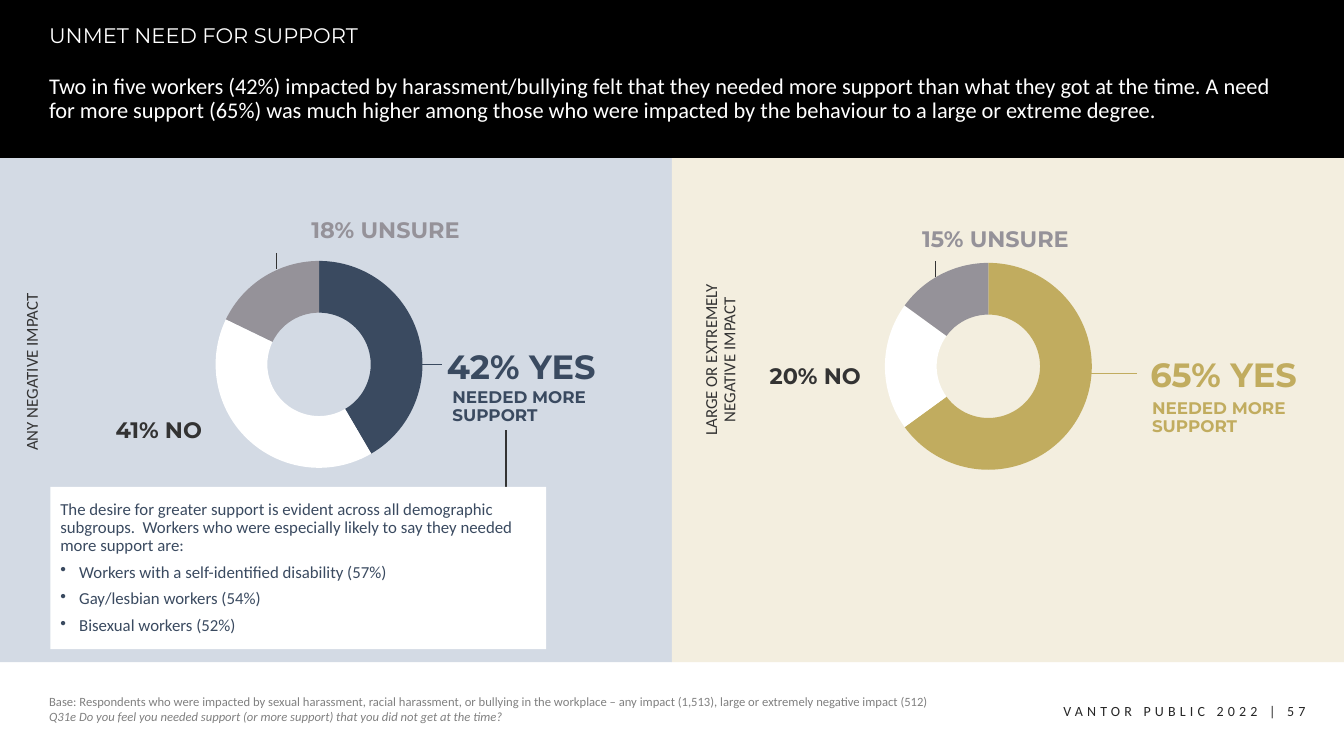
"""Builds the slide on unmet need for support as a pair of doughnut panels."""
from lxml.etree import SubElement
from pptx import Presentation
from pptx.chart.data import CategoryChartData
from pptx.dml.color import RGBColor
from pptx.enum.chart import XL_CHART_TYPE
from pptx.enum.shapes import MSO_CONNECTOR, MSO_SHAPE
from pptx.enum.text import MSO_ANCHOR, PP_ALIGN
from pptx.oxml import parse_xml
from pptx.oxml.ns import nsdecls, qn
from pptx.util import Pt

THEME = {
    "black": "000000", "white": "FFFFFF", "ink": "333333", "dark": "262626",
    "navy": "3A4A60", "gold": "C1AC5F", "grey": "959299", "note": "808080",
    "mist": "D3DAE4", "cream": "F3EEDF",
    "body_font": "Calibri", "head_font": "Montserrat",
    "yes": 24, "lead": 16, "label": 16, "title": 15, "text": 12, "tag": 10, "base": 9,
}
TITLE = "UNMET NEED FOR SUPPORT"
LEAD = ("Two in five workers (42%) impacted by harassment/bullying felt that they needed more support "
        "than what they got at the time. A need for more support (65%) was much higher among those "
        "who were impacted by the behaviour to a large or extreme degree.")
BASE = ("Base: Respondents who were impacted by sexual harassment, racial harassment, or bullying in the "
        "workplace – any impact (1,513), large or extremely negative impact (512)")
QUESTION = "Q31e Do you feel you needed support (or more support) that you did not get at the time?"
TAG = "VANTOR PUBLIC 2022 | 57"
NEEDED = "NEEDED MORE SUPPORT"
GROUPS_INTRO = ("The desire for greater support is evident across all demographic subgroups.  Workers who "
                "were especially likely to say they needed more support are:")
GROUPS = ["Workers with a self-identified disability (57%)", "Gay/lesbian workers (54%)",
          "Bisexual workers (52%)"]
PANELS = [
    {"name": "ANY NEGATIVE IMPACT", "name_at": (-48.2, 229.7), "name_align": PP_ALIGN.LEFT,
     "fill": "mist", "accent": "navy", "values": (42, 41, 18), "chart_at": (118.8, 176.4),
     "yes_box": (307.4, 247.7, 136.8, 31), "needed_at": (316.1, 275),
     "no_box": (4.3, 292.3, 218.2, 31), "no_align": PP_ALIGN.CENTER, "unsure_at": (166.3, 149.8),
     "yes_line": (301, 260.6, 315.4, 260.6), "unsure_line": (197.3, 180.7, 197.3, 192.2)},
    {"name": "LARGE OR EXTREMELY NEGATIVE IMPACT", "name_at": (443.5, 229),
     "name_align": PP_ALIGN.CENTER,
     "fill": "cream", "accent": "gold", "values": (65, 20, 15), "chart_at": (596.9, 177.8),
     "yes_box": (805.7, 253.4, 143.3, 31), "needed_at": (815.8, 283),
     "no_box": (517, 254.2, 105, 31), "no_align": PP_ALIGN.RIGHT, "unsure_at": (602, 156.2),
     "yes_line": (776.2, 266.4, 812.2, 266.4), "unsure_line": (668.2, 186.5, 668.2, 198)},
]
SLIDE_W, SLIDE_H, HEADER_H, PANEL_H = 960, 540, 113, 360
CHART_W, CHART_H, RING = 218.2, 167.8, 147.8


def color(key):
    return RGBColor.from_string(THEME[key])


def add_rect(s, box, fill):
    sp = s.shapes.add_shape(MSO_SHAPE.RECTANGLE, *map(Pt, box))
    sp.shadow.inherit = False
    sp.fill.solid()
    sp.fill.fore_color.rgb = color(fill)
    sp.line.fill.background()
    return sp


def add_line(s, ends, key, width):
    ln = s.shapes.add_connector(MSO_CONNECTOR.STRAIGHT, *map(Pt, ends))
    ln.line.color.rgb = color(key)
    ln.line.width = Pt(width)
    SubElement(ln._element.spPr, qn("a:effectLst"))


def write(p, text, size, key, font="body_font", bold=False, italic=False,
          align=PP_ALIGN.LEFT, spacing=0.9, before=10):
    p.alignment, p.line_spacing, p.space_before = align, spacing, Pt(before)
    r = p.add_run()
    r.text = text
    r.font.size, r.font.name = Pt(THEME[size]), THEME[font]
    r.font.bold, r.font.italic = bold, italic
    r.font.color.rgb = color(key)
    return r


def add_text(s, box, text, size, key, anchor=MSO_ANCHOR.MIDDLE, rotation=0, **style):
    sp = s.shapes.add_textbox(*map(Pt, box))
    sp.rotation = rotation
    tf = sp.text_frame
    tf.word_wrap, tf.vertical_anchor = True, anchor
    return tf, write(tf.paragraphs[0], text, size, key, **style)


def add_ring(s, panel):
    data = CategoryChartData()
    data.categories = ["1", "2", "3"]
    data.add_series("Series 1", panel["values"])
    box = map(Pt, (*panel["chart_at"], CHART_W, CHART_H))
    chart = s.shapes.add_chart(XL_CHART_TYPE.DOUGHNUT, *box, data).chart
    chart.has_legend = chart.has_title = False
    chart.font.size, chart.font.name = Pt(THEME["tag"]), THEME["body_font"]
    chart.font.color.rgb = color("ink")
    for i, key in enumerate((panel["accent"], "white", "grey")):
        fmt = chart.plots[0].series[0].points[i].format
        fmt.fill.solid()
        fmt.fill.fore_color.rgb = color(key)
        fmt.line.fill.background()
    area = chart._chartSpace.find(".//" + qn("c:plotArea"))
    area.find(".//" + qn("c:holeSize")).set("val", "75")
    for old in area.findall(qn("c:layout")):
        area.remove(old)
    w, h = RING / CHART_W, RING / CHART_H
    parts = {"layoutTarget": "inner", "xMode": "edge", "yMode": "edge",
             "x": (1 - w) / 2, "y": (1 - h) / 2, "w": w, "h": h}
    layout = parse_xml(f"<c:layout {nsdecls('c')}><c:manualLayout/></c:layout>")
    for tag, val in parts.items():
        SubElement(layout[0], qn("c:" + tag)).set("val", str(val))
    area.insert(0, layout)


def add_panel(s, panel):
    accent = panel["accent"]
    label = {"font": "head_font", "bold": True}
    yes, no, unsure = panel["values"]
    add_ring(s, panel)
    add_text(s, (*panel["name_at"], 142.6, 56.2), panel["name"], "text", "ink",
             rotation=270, align=panel["name_align"])
    add_text(s, panel["yes_box"], f"{yes}% YES ", "yes", accent, align=PP_ALIGN.CENTER, **label)
    add_text(s, (*panel["needed_at"], 144, 31), NEEDED, "text", accent, **label)
    add_text(s, panel["no_box"], f"{no}% NO", "label", "ink", align=panel["no_align"], **label)
    add_text(s, (*panel["unsure_at"], CHART_W, 31), f"{unsure}% UNSURE", "label", "grey",
             align=PP_ALIGN.CENTER, **label)
    add_line(s, panel["yes_line"], accent, 0.5)
    add_line(s, panel["unsure_line"], "ink", 0.5)


def add_groups(s):
    add_line(s, (361.5, 370, 361.5, 307.5), "ink", 1.5)
    tf = add_rect(s, (36, 347.8, 354.2, 115.9), "white").text_frame
    tf.word_wrap, tf.vertical_anchor = True, MSO_ANCHOR.MIDDLE
    write(tf.paragraphs[0], GROUPS_INTRO, "text", "navy", before=6)
    for group in GROUPS:
        p = tf.add_paragraph()
        write(p, group, "text", "navy", before=6)
        pPr = p._p.get_or_add_pPr()
        pPr.set("marL", str(Pt(13.5)))
        pPr.set("indent", str(-Pt(13.5)))
        SubElement(pPr, qn("a:buChar")).set("char", "•")


def main():
    prs = Presentation()
    prs.slide_width, prs.slide_height = Pt(SLIDE_W), Pt(SLIDE_H)
    s = prs.slides.add_slide(prs.slide_layouts[6])
    add_rect(s, (0, 0, SLIDE_W, HEADER_H), "black")
    add_text(s, (28, 14.4, 745, 29), TITLE, "title", "white", anchor=MSO_ANCHOR.TOP,
             font="head_font", before=0)
    add_text(s, (28, 43, 890.6, 56), LEAD, "lead", "white")
    panel_w = SLIDE_W / len(PANELS)
    for i, panel in enumerate(PANELS):
        add_rect(s, (i * panel_w, HEADER_H, panel_w, PANEL_H), panel["fill"])
    for panel in PANELS:
        add_panel(s, panel)
    add_groups(s)
    plain = {"spacing": 1.0, "before": 0}
    tf, _ = add_text(s, (28, 491.8, 719.3, 28.8), BASE, "base", "note", **plain)
    write(tf.add_paragraph(), QUESTION, "base", "note", italic=True, **plain)
    _, r = add_text(s, (725.8, 498.2, 213.8, 19.4), TAG, "tag", "dark",
                    anchor=MSO_ANCHOR.TOP, align=PP_ALIGN.RIGHT, **plain)
    r._r.get_or_add_rPr().set("spc", "300")
    prs.save("out.pptx")


if __name__ == "__main__":
    main()
